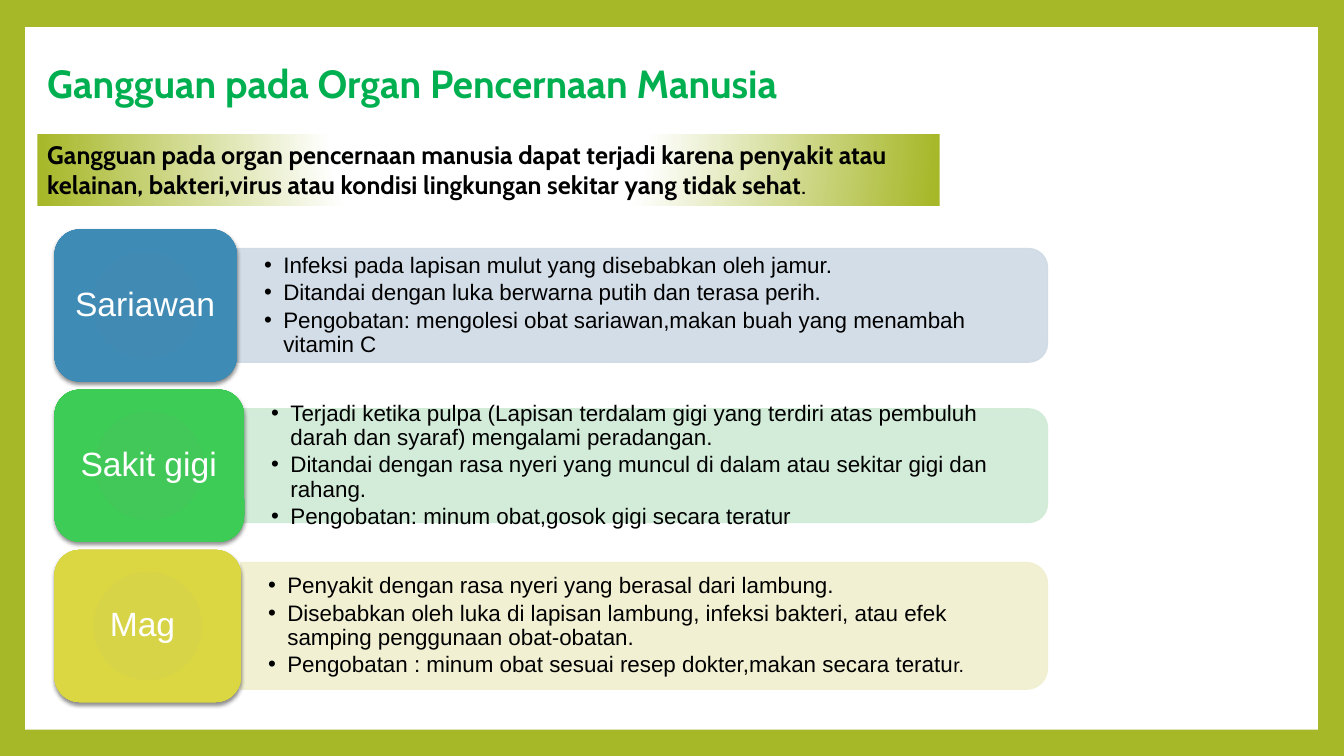
from lxml import etree
from pptx import Presentation
from pptx.dml.color import RGBColor
from pptx.enum import shapes, text
from pptx.oxml.ns import qn
from pptx.util import Inches, Pt

OLIVE = RGBColor(0xA6, 0xB7, 0x27)
WHITE = RGBColor(0xFF, 0xFF, 0xFF)
BLACK = RGBColor(0x00, 0x00, 0x00)
TITLE_GREEN = RGBColor(0x00, 0xB0, 0x50)
PALE_BLUE = RGBColor(0xCF, 0xDA, 0xE5)
PALE_GREEN = RGBColor(0xCF, 0xEB, 0xD5)
PALE_YELLOW = RGBColor(0xF0, 0xEF, 0xCF)
BLUES = [RGBColor(0x41, 0x8A, 0xB3), RGBColor(0x3E, 0x8B, 0xB6), RGBColor(0x31, 0x80, 0xAD)]
GREENS = [RGBColor(0x41, 0xC8, 0x58), RGBColor(0x3D, 0xCC, 0x55), RGBColor(0x2E, 0xC2, 0x47)]
YELLOWS = [RGBColor(0xD7, 0xD4, 0x47), RGBColor(0xDB, 0xD7, 0x43), RGBColor(0xD0, 0xCD, 0x33)]

TILE_LEFT, TILE_HEIGHT = 0.54, 1.51
FIRST_CENTRE, ROW_PITCH = 3.03, 1.59
PANEL_RIGHT = 10.39

# name, tile colours, tile width, panel colour, panel height, details
DISORDERS = [
    ("Sariawan", BLUES, 1.81, PALE_BLUE, 1.13, [
        "Infeksi pada lapisan mulut yang disebabkan oleh jamur.",
        "Ditandai dengan luka berwarna putih dan terasa perih.",
        "Pengobatan: mengolesi obat sariawan,makan buah yang menambah vitamin C"]),
    ("Sakit gigi", GREENS, 1.88, PALE_GREEN, 1.13, [
        "Terjadi ketika pulpa (Lapisan terdalam gigi yang terdiri atas pembuluh darah "
        "dan syaraf) mengalami peradangan.",
        "Ditandai dengan rasa nyeri yang muncul di dalam atau sekitar gigi dan rahang.",
        "Pengobatan: minum obat,gosok gigi secara teratur"]),
    ("Mag ", YELLOWS, 1.85, PALE_YELLOW, 1.26, [
        "Penyakit dengan rasa nyeri yang berasal dari lambung.",
        "Disebabkan oleh luka di lapisan lambung, infeksi bakteri, atau efek samping "
        "penggunaan obat-obatan.",
        "Pengobatan : minum obat sesuai resep dokter,makan secara teratu"]),
]


def add_child(parent, tag, **attributes):
    return etree.SubElement(parent, qn(tag), {k: str(v) for k, v in attributes.items()})


def add_block(slide, kind, left, top, width, height, colour=None):
    block = slide.shapes.add_shape(kind, Inches(left), Inches(top), Inches(width), Inches(height))
    block.shadow.inherit = False
    block.line.fill.background()
    if colour is not None:
        block.fill.solid()
        block.fill.fore_color.rgb = colour
    return block


def fill_radially(block, stops, focus):
    """Fill with a circular gradient; focus holds the l, t, r, b percentages."""
    block.fill.gradient()
    gradient = block._element.spPr.find(qn("a:gradFill"))
    for child in list(gradient):
        gradient.remove(child)
    stop_list = add_child(gradient, "a:gsLst")
    for position, colour in stops:
        stop = add_child(stop_list, "a:gs", pos=position * 1000)
        add_child(stop, "a:srgbClr", val=colour)
    circle = add_child(gradient, "a:path", path="circle")
    add_child(circle, "a:fillToRect", **{side: value * 1000 for side, value in zip("ltrb", focus)})


def cast_shadow(block):
    effects = block._element.spPr.find(qn("a:effectLst"))
    shadow = add_child(effects, "a:outerShdw", blurRad=Pt(3), dist=Pt(2), dir=5400000,
                       algn="ctr", rotWithShape=0)
    add_child(add_child(shadow, "a:srgbClr", val=BLACK), "a:alpha", val=45000)


def add_text_area(slide, left, top, width, height, anchor):
    area = slide.shapes.add_textbox(Inches(left), Inches(top), Inches(width), Inches(height))
    frame = area.text_frame
    frame.word_wrap = True
    frame.vertical_anchor = anchor
    return frame


def style_run(run, size, face, colour, bold=False):
    run.font.size, run.font.name, run.font.bold = Pt(size), face, bold
    run.font.color.rgb = colour


def space_paragraph(paragraph, after_percent):
    paragraph.line_spacing = 0.9
    after = add_child(paragraph._p.get_or_add_pPr(), "a:spcAft")
    add_child(after, "a:spcPct", val=after_percent * 1000)


def add_bullet(paragraph):
    paragraph.level = 1
    properties = paragraph._p.get_or_add_pPr()
    properties.set("marL", str(Inches(0.19)))
    properties.set("indent", str(-Inches(0.19)))
    add_child(properties, "a:buFont", typeface="Arial")
    add_child(properties, "a:buChar", char="•")


def add_panel(slide, left, centre, height, colour):
    """Add a panel with rounded right corners: a round-top shape turned by 90 degrees."""
    length = PANEL_RIGHT - left
    panel = add_block(slide, shapes.MSO_SHAPE.ROUND_2_SAME_RECTANGLE,
                      left + (length - height) / 2, centre - length / 2, height, length, colour)
    panel.rotation = 90
    panel.line.color.rgb = colour
    panel.line.width = Pt(0.79)
    for tint in panel._element.spPr.iter(qn("a:srgbClr")):
        add_child(tint, "a:alpha", val=90000)


def add_details(slide, left, centre, panel_height, details):
    height = panel_height * 0.9
    frame = add_text_area(slide, left, centre - height / 2, PANEL_RIGHT - 0.06 - left, height,
                          text.MSO_ANCHOR.MIDDLE)
    frame.margin_left = frame.margin_right = Inches(0.27)
    frame.margin_top = frame.margin_bottom = Inches(0.14)
    frame.text = "\n".join(details)
    for paragraph in frame.paragraphs:
        space_paragraph(paragraph, 15)
        add_bullet(paragraph)
        style_run(paragraph.runs[0], 16, "Arial", BLACK)
    return frame


def add_tile(slide, centre, width, colours, name):
    top = centre - TILE_HEIGHT / 2
    tile = add_block(slide, shapes.MSO_SHAPE.ROUNDED_RECTANGLE, TILE_LEFT, top, width, TILE_HEIGHT)
    fill_radially(tile, zip((0, 90, 100), colours), (100, 100, 100, 100))
    cast_shadow(tile)
    frame = add_text_area(slide, TILE_LEFT + 0.07, top + 0.07, width - 0.15, TILE_HEIGHT - 0.14,
                          text.MSO_ANCHOR.MIDDLE)
    frame.text = name
    label = frame.paragraphs[0]
    label.alignment = text.PP_ALIGN.CENTER
    space_paragraph(label, 35)
    style_run(label.runs[0], 24, "Arial", WHITE)


def add_title(slide):
    frame = add_text_area(slide, 0.37, 0.54, 8.65, 0.57, text.MSO_ANCHOR.TOP)
    frame.text = "Gangguan pada Organ Pencernaan Manusia"
    style_run(frame.paragraphs[0].runs[0], 28, "Cabin", TITLE_GREEN, bold=True)


def add_cause_banner(slide):
    banner = add_block(slide, shapes.MSO_SHAPE.RECTANGLE, 0.37, 1.33, 8.95, 0.71)
    fill_radially(banner, [(0, WHITE), (35, WHITE), (100, OLIVE)], (50, -80, 50, 180))
    frame = banner.text_frame
    frame.word_wrap = True
    frame.vertical_anchor = text.MSO_ANCHOR.TOP
    frame.text = ("Gangguan pada organ pencernaan manusia dapat terjadi karena penyakit atau "
                  "kelainan, bakteri,virus atau kondisi lingkungan sekitar yang tidak sehat")
    cause = frame.paragraphs[0]
    cause.alignment = text.PP_ALIGN.LEFT
    style_run(cause.runs[0], 18, "Cabin", BLACK, bold=True)
    full_stop = cause.add_run()
    full_stop.text = "."
    style_run(full_stop, 18, "Cabin", BLACK)


def main():
    deck = Presentation()
    deck.slide_width, deck.slide_height = Inches(13.33), Inches(7.5)
    slide = deck.slides.add_slide(deck.slide_layouts[6])
    slide.background.fill.solid()
    slide.background.fill.fore_color.rgb = OLIVE
    add_block(slide, shapes.MSO_SHAPE.RECTANGLE, 0.25, 0.27, 12.82, 6.97, WHITE)

    for row, (name, colours, width, pale, height, details) in enumerate(DISORDERS):
        centre = FIRST_CENTRE + row * ROW_PITCH
        panel_left = TILE_LEFT + width
        add_panel(slide, panel_left, centre, height, pale)
        details_frame = add_details(slide, panel_left, centre, height, details)
        add_tile(slide, centre, width, colours, name)
    ending = details_frame.paragraphs[-1].add_run()
    ending.text = "r."
    style_run(ending, 14, "Arial", BLACK)

    add_title(slide)
    add_cause_banner(slide)
    deck.save("out.pptx")


if __name__ == "__main__":
    main()
